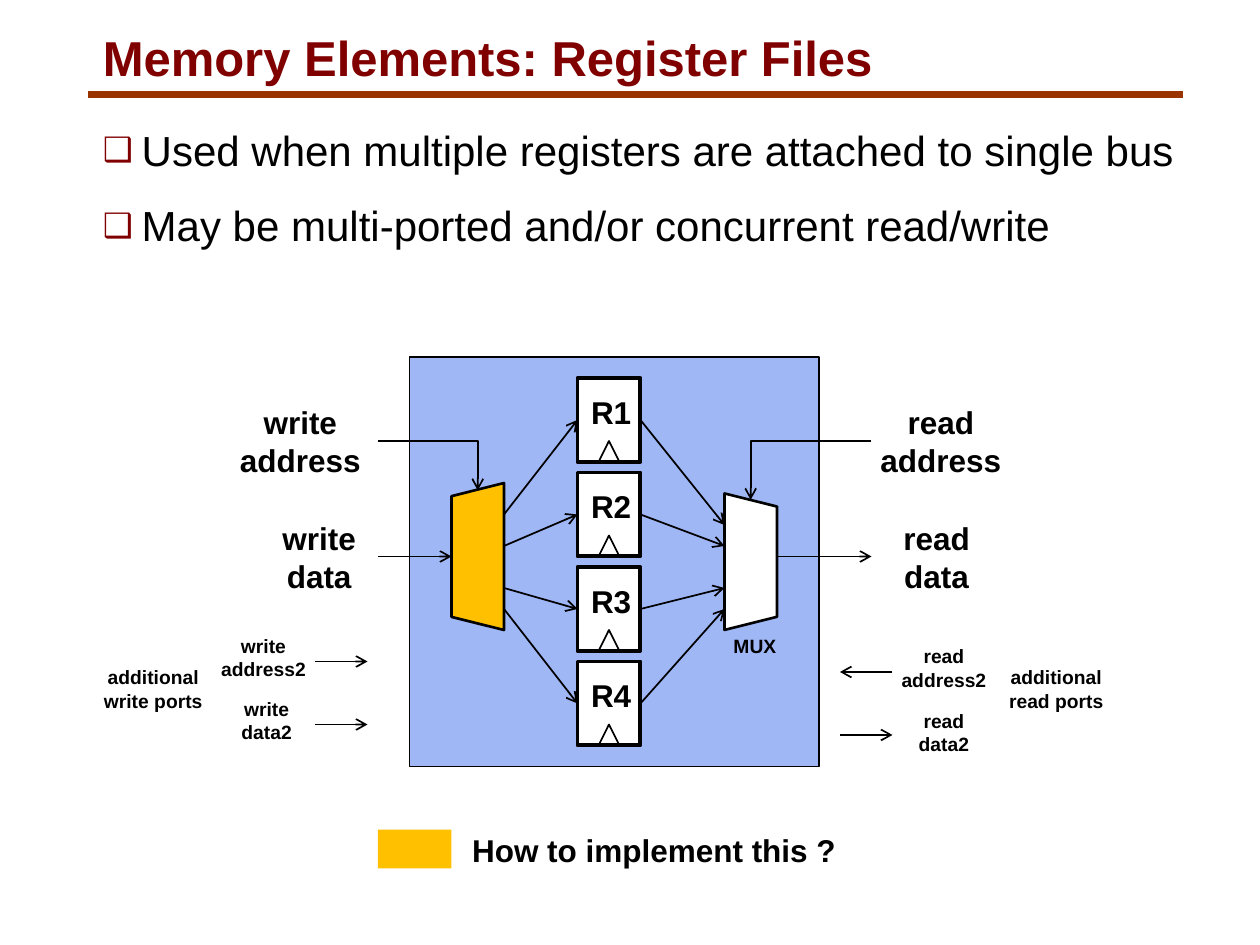
from lxml import etree
from pptx import Presentation
from pptx.dml.color import RGBColor
from pptx.enum.shapes import MSO_CONNECTOR, MSO_SHAPE
from pptx.enum.text import MSO_ANCHOR, MSO_AUTO_SIZE, PP_ALIGN
from pptx.oxml.ns import qn
from pptx.util import Pt

PX = 7620  # 120 px to the inch
RECT, TRAPEZOID = MSO_SHAPE.RECTANGLE, MSO_SHAPE.TRAPEZOID
STRAIGHT, ELBOW = MSO_CONNECTOR.STRAIGHT, MSO_CONNECTOR.ELBOW
LEFT, CENTER = PP_ALIGN.LEFT, PP_ALIGN.CENTER
BLACK, WHITE, MAROON, RUST = "000000", "FFFFFF", "800000", "993300"
BLUE, AMBER = "A0B7F6", "FFC000"


def px(*lengths):
    return [round(length * PX) for length in lengths]


def rgb(color):
    return RGBColor.from_string(color)


def set_frame(frame, wrap):
    frame.margin_left = frame.margin_right = 8 * PX
    frame.margin_top = frame.margin_bottom = 4 * PX
    frame.word_wrap = wrap
    frame.auto_size = MSO_AUTO_SIZE.NONE
    frame.vertical_anchor = MSO_ANCHOR.TOP


def set_font(paragraph, size, color=BLACK, bold=True):
    font = paragraph.font
    font.name, font.size, font.bold = "Arial", Pt(size), bold
    font.color.rgb = rgb(color)


def place(placeholder, box):
    placeholder.left, placeholder.top, placeholder.width, placeholder.height = px(*box)


def add_label(slide, center, top, lines, size=18):
    """Bold lines centred on the x position center."""
    width, height = 150, round(len(lines) * size * 2) + 8
    label = slide.shapes.add_textbox(*px(center - width / 2, top, width, height))
    frame = label.text_frame
    set_frame(frame, False)
    frame.text = "\n".join(lines)
    for paragraph in frame.paragraphs:
        paragraph.alignment = CENTER
        set_font(paragraph, size)


def style(shape, fill, weight):
    shape.shadow.inherit = False
    if fill:
        shape.fill.solid()
        shape.fill.fore_color.rgb = rgb(fill)
    else:
        shape.fill.background()
    if weight:
        shape.line.color.rgb = rgb(BLACK)
        shape.line.width = Pt(weight)
    else:
        shape.line.fill.background()


def add_block(slide, kind, box, fill, weight=0):
    block = slide.shapes.add_shape(kind, *px(*box))
    style(block, fill, weight)
    return block


def add_line(slide, start, end, color=BLACK, weight=1, kind=STRAIGHT):
    line = slide.shapes.add_connector(kind, *px(*start, *end))
    line.line.color.rgb = rgb(color)
    line.line.width = Pt(weight)
    etree.SubElement(line._element.spPr, qn("a:effectLst"))
    return line


def add_arrow(slide, start, end, kind=STRAIGHT):
    """Arrow that is straight, or turns one corner when kind is ELBOW."""
    arrow = add_line(slide, start, end, kind=kind)
    properties = arrow._element.spPr
    etree.SubElement(properties.find(qn("a:ln")), qn("a:tailEnd"), type="arrow")
    if kind == ELBOW:
        properties.find(qn("a:prstGeom")).set("prst", "bentConnector2")


def add_header(slide, box):
    left, top, _, _ = box
    title = slide.shapes.title
    place(title, box)
    set_frame(title.text_frame, False)
    title.text_frame.text = "Memory Elements: Register Files"
    paragraph = title.text_frame.paragraphs[0]
    paragraph.alignment, paragraph.line_spacing = LEFT, 0.87
    set_font(paragraph, 28, MAROON)
    add_line(slide, (left - 6, top + 60), (left + 1037, top + 60), RUST, 4.5)


def add_bullet(paragraph):
    properties = paragraph._p.get_or_add_pPr()
    properties.set("marL", str(37 * PX))
    properties.set("indent", str(-37 * PX))
    color = etree.SubElement(properties, qn("a:buClr"))
    etree.SubElement(color, qn("a:srgbClr"), val=MAROON)
    etree.SubElement(properties, qn("a:buSzPct"), val="80000")
    etree.SubElement(properties, qn("a:buFont"), typeface="Arial")
    etree.SubElement(properties, qn("a:buChar"), char="❑")


def add_points(slide, box, points):
    body = slide.placeholders[1]
    place(body, box)
    frame = body.text_frame
    set_frame(frame, True)
    frame.text = "\n".join(points)
    for index, paragraph in enumerate(frame.paragraphs):
        paragraph.line_spacing = 0.9
        paragraph.space_before = Pt(17 if index else 0)
        add_bullet(paragraph)
        set_font(paragraph, 24, bold=False)


def add_register(slide, box, name):
    left, top, width, height = box
    add_block(slide, RECT, box, WHITE, 2.25)
    middle, bottom = left + width // 2, top + height
    outline = slide.shapes.build_freeform(middle - 10, bottom, PX)
    outline.add_line_segments([(middle, bottom - 20), (middle + 10, bottom)], close=False)
    style(outline.convert_to_shape(), None, 1)
    add_label(slide, middle + 2, top + 10, [name])


def add_selector(slide, box, fill, rotation):
    """Trapezoid on its side that fills the box once rotated."""
    left, top, width, height = box
    shift = (height - width) / 2
    selector = add_block(slide, TRAPEZOID, (left - shift, top + shift, height, width), fill, 1.5)
    selector.rotation = rotation


def add_register_file(slide, box):
    left, top, _, _ = box
    add_block(slide, RECT, box, BLUE, 1)
    fan_out, fan_in = (150, 180, 220, 240), (160, 180, 220, 240)
    for index, (out_y, in_y) in enumerate(zip(fan_out, fan_in)):
        y = top + 20 + 90 * index
        add_register(slide, (left + 160, y, 60, 80), f"R{index + 1}")
        add_arrow(slide, (left + 90, top + out_y), (left + 160, y + 40))
        add_arrow(slide, (left + 220, y + 40), (left + 300, top + in_y))
    add_selector(slide, (left + 40, top + 120, 50, 140), AMBER, 270)
    add_selector(slide, (left + 300, top + 130, 50, 130), WHITE, 90)
    add_label(slide, left + 329, top + 260, ["MUX"], 11)


def add_write_ports(slide, box):
    left, top, width, _ = box
    right = left + width
    add_arrow(slide, (right - 30, top + 80), (right + 65, top + 127), ELBOW)
    add_arrow(slide, (right - 30, top + 190), (right + 40, top + 190))
    add_label(slide, left + 196, top + 40, ["write", "address"])
    add_label(slide, left + 214, top + 150, ["write", "data"])
    for y, center, word in ((290, 161, "address2"), (350, 164, "data2")):
        add_arrow(slide, (right - 90, top + y), (right - 40, top + y))
        add_label(slide, left + center, top + y - 30, ["write", word], 11)
    add_label(slide, left + 56, top + 290, ["additional", "write ports"], 11)


def add_read_ports(slide, box):
    left, top, _, _ = box
    add_arrow(slide, (left + 50, top + 80), (left - 65, top + 136), ELBOW)
    add_arrow(slide, (left - 40, top + 190), (left + 50, top + 190))
    add_label(slide, left + 116, top + 40, ["read", "address"])
    add_label(slide, left + 112, top + 150, ["read", "data"])
    add_arrow(slide, (left + 70, top + 300), (left + 20, top + 300))
    add_arrow(slide, (left + 20, top + 360), (left + 70, top + 360))
    for y, word in ((270, "address2"), (331, "data2")):
        add_label(slide, left + 119, top + y, ["read", word], 11)
    add_label(slide, left + 226, top + 290, ["additional", "read ports"], 11)


def add_question(slide, box):
    left, top, _, height = box
    add_block(slide, RECT, (left, top, 70, height), AMBER)
    add_label(slide, left + 263, top - 3, ["How to implement this ?"])


def main():
    deck = Presentation()
    deck.slide_width, deck.slide_height = px(1200, 900)
    slide = deck.slides.add_slide(deck.slide_layouts[1])
    add_header(slide, (90, 30, 758, 56))
    add_points(slide, (90, 120, 1060, 169), [
        "Used when multiple registers are attached to single bus",
        "May be multi-ported and/or concurrent read/write",
    ])
    add_register_file(slide, (390, 340, 390, 390))
    add_write_ports(slide, (90, 340, 300, 390))
    add_read_ports(slide, (780, 340, 280, 390))
    add_question(slide, (360, 790, 447, 37))
    deck.save("out.pptx")


if __name__ == "__main__":
    main()
